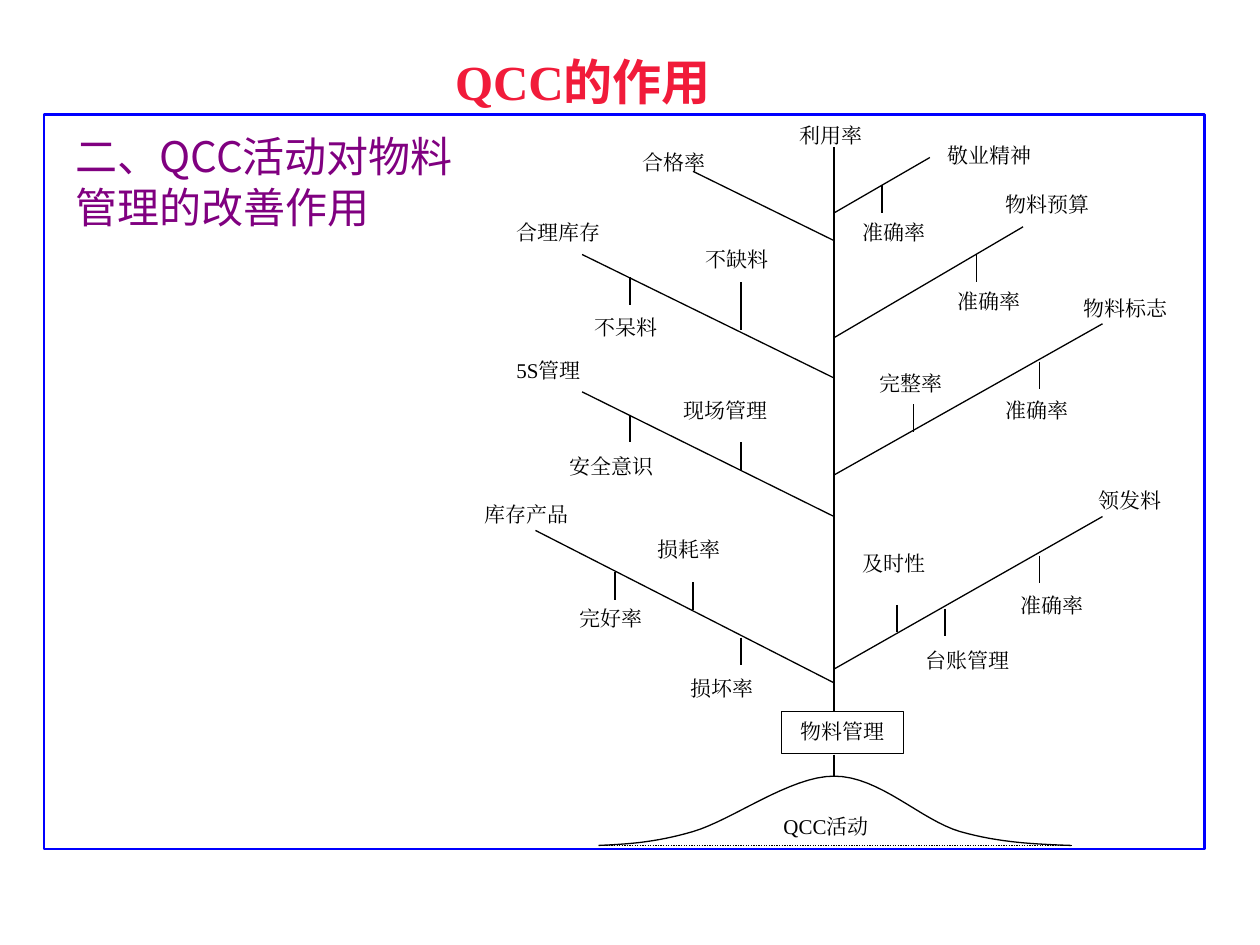
from lxml import etree
from pptx import Presentation
from pptx.dml.color import RGBColor
from pptx.enum import dml, shapes, text
from pptx.oxml import ns
from pptx.util import Inches, Pt

RED = RGBColor(0xF1, 0x1B, 0x3A)
BLUE = RGBColor(0x00, 0x00, 0xFF)
PURPLE = RGBColor(0x80, 0x00, 0x80)
BLACK = RGBColor(0x00, 0x00, 0x00)
SERIF = "Times New Roman"
SANS = "Noto Sans CJK SC"
TRUNK = 6.62
TWIG = 0.22


def write(shape, *runs, size=12, color=BLACK, bold=False, align=text.PP_ALIGN.JUSTIFY,
          anchor=text.MSO_ANCHOR.TOP, spacing=None):
    frame = shape.text_frame
    frame.word_wrap = True
    frame.vertical_anchor = anchor
    paragraph = frame.paragraphs[0]
    paragraph.alignment = align
    paragraph.line_spacing = spacing
    for content, font_name in runs:
        run = paragraph.add_run()
        run.text = content
        run.font.name = font_name
        run.font.size = Pt(size)
        run.font.bold = bold
        run.font.color.rgb = color
        east_asian = etree.SubElement(run.font._element, ns.qn("a:ea"))
        east_asian.set("typeface", font_name)


def draw_line(parent, x1, y1, x2, y2):
    line = parent.add_connector(shapes.MSO_CONNECTOR.STRAIGHT,
                                Inches(x1), Inches(y1), Inches(x2), Inches(y2))
    line.line.color.rgb = BLACK
    line.line.width = Pt(0.75)
    etree.SubElement(line._element.spPr, ns.qn("a:effectLst"))
    return line


presentation = Presentation()
presentation.slide_width = Inches(10)
presentation.slide_height = Inches(7.5)
slide = presentation.slides.add_slide(presentation.slide_layouts[5])

title = slide.shapes.title
title.left, title.top = Inches(1.67), Inches(0.44)
title.width, title.height = Inches(6), Inches(0.4)
title.text_frame.auto_size = text.MSO_AUTO_SIZE.NONE
write(title, ("QCC", SERIF), ("的作用 ", SANS), size=28, color=RED, bold=True,
      align=text.PP_ALIGN.CENTER, anchor=text.MSO_ANCHOR.MIDDLE)

boxes = []
for left, top, width, height, color, weight in [
    (0.35, 0.91, 9.21, 5.83, BLUE, 1.5),
    (6.2, 5.65, 0.97, 0.33, BLACK, 0.75),
]:
    box = slide.shapes.add_shape(shapes.MSO_SHAPE.RECTANGLE, Inches(left), Inches(top),
                                 Inches(width), Inches(height))
    box.shadow.inherit = False
    box.fill.background()
    box.line.color.rgb = color
    box.line.width = Pt(weight)
    boxes.append(box)
write(boxes[1], ("物料管理", SERIF), align=text.PP_ALIGN.CENTER)

heading = slide.shapes.add_textbox(Inches(0.5), Inches(0.99), Inches(3.42), Inches(0.9))
heading.text_frame.auto_size = text.MSO_AUTO_SIZE.SHAPE_TO_FIT_TEXT
write(heading, ("二、QCC活动对物料管理的改善作用", SANS), size=24, color=PURPLE,
      align=text.PP_ALIGN.LEFT, spacing=Pt(28.8))

hill_curves = [
    ((4.75, 6.71), (4.97, 6.7), (5.19, 6.69), (5.5, 6.6)),
    ((5.5, 6.6), (5.81, 6.51), (6.27, 6.16), (6.62, 6.16)),
    ((6.62, 6.16), (6.98, 6.16), (7.31, 6.51), (7.62, 6.6)),
    ((7.62, 6.6), (7.94, 6.69), (8.22, 6.7), (8.5, 6.71)),
]
steps = 16
hill_points = []
for curve in hill_curves:
    for step in range(1, steps + 1):
        t = step / steps
        weights = ((1 - t) ** 3, 3 * t * (1 - t) ** 2, 3 * t ** 2 * (1 - t), t ** 3)
        hill_points.append(tuple(
            Inches(sum(weight * point[axis] for weight, point in zip(weights, curve)))
            for axis in (0, 1)))
ground = slide.shapes.add_group_shape()
builder = ground.shapes.build_freeform(Inches(4.75), Inches(6.71))
builder.add_line_segments(hill_points, close=False)
hill = builder.convert_to_shape()
hill.shadow.inherit = False
hill.fill.background()
hill.line.color.rgb = BLACK
hill.line.width = Pt(0.75)
base = draw_line(ground.shapes, 4.75, 6.71, 8.5, 6.71)
base.line.dash_style = dml.MSO_LINE.ROUND_DOT

for top, bottom in [(1.17, 5.65), (5.99, 6.16)]:
    draw_line(slide.shapes, TRUNK, top, TRUNK, bottom)

branches = [
    (7.38, 1.25, 1.69), (8.12, 1.8, 2.68), (8.75, 2.57, 3.77), (8.75, 4.1, 5.31),
    (5.5, 1.36, 1.91), (4.62, 2.02, 3), (4.62, 3.11, 4.1), (4.25, 4.21, 5.42),
]
for tip_x, tip_y, joint_y in branches:
    draw_line(slide.shapes, tip_x, tip_y, TRUNK, joint_y)

twigs = [
    (7, 1.47), (7.75, 2.02), (7.25, 3.21), (8.25, 2.87), (7.12, 4.8),
    (7.5, 4.83), (8.25, 4.41), (5.88, 5.06), (4.88, 4.54), (5.5, 4.62),
    (5, 3.29), (5.88, 3.51), (5, 2.2), (5.88, 2.24), (5.88, 2.4),
]
for x, top in twigs:
    draw_line(slide.shapes, x, top, x, top + TWIG)

labels = [
    ("利用率", 6.25, 0.92, 0.75), ("敬业精神", 7.42, 1.08, 0.96),
    ("物料预算", 7.88, 1.47, 1.04), ("物料标志", 8.5, 2.3, 0.88),
    ("领发料", 8.62, 3.82, 0.75), ("合格率", 5, 1.14, 0.75),
    ("合理库存", 4, 1.69, 0.92), ("5S管理", 4, 2.79, 0.75),
    ("库存产品", 3.75, 3.93, 1), ("不缺料", 5.5, 1.91, 0.75),
    ("不呆料", 4.62, 2.45, 0.75), ("安全意识", 4.42, 3.55, 0.96),
    ("现场管理", 5.33, 3.11, 0.92), ("损耗率", 5.12, 4.21, 0.75),
    ("完好率", 4.5, 4.76, 0.75), ("损坏率", 5.38, 5.31, 0.75),
    ("准确率", 6.75, 1.69, 0.75), ("准确率", 7.5, 2.24, 0.75),
    ("准确率", 7.88, 3.11, 0.75), ("准确率", 8, 4.65, 0.75),
    ("完整率", 6.88, 2.89, 0.75), ("及时性", 6.75, 4.32, 0.75),
    ("台账管理", 7.25, 5.09, 1), ("QCC活动", 6.12, 6.41, 1.04),
]
for content, left, top, width in labels:
    label = slide.shapes.add_textbox(Inches(left), Inches(top), Inches(width), Inches(0.33))
    write(label, (content, SERIF))

presentation.save("out.pptx")
